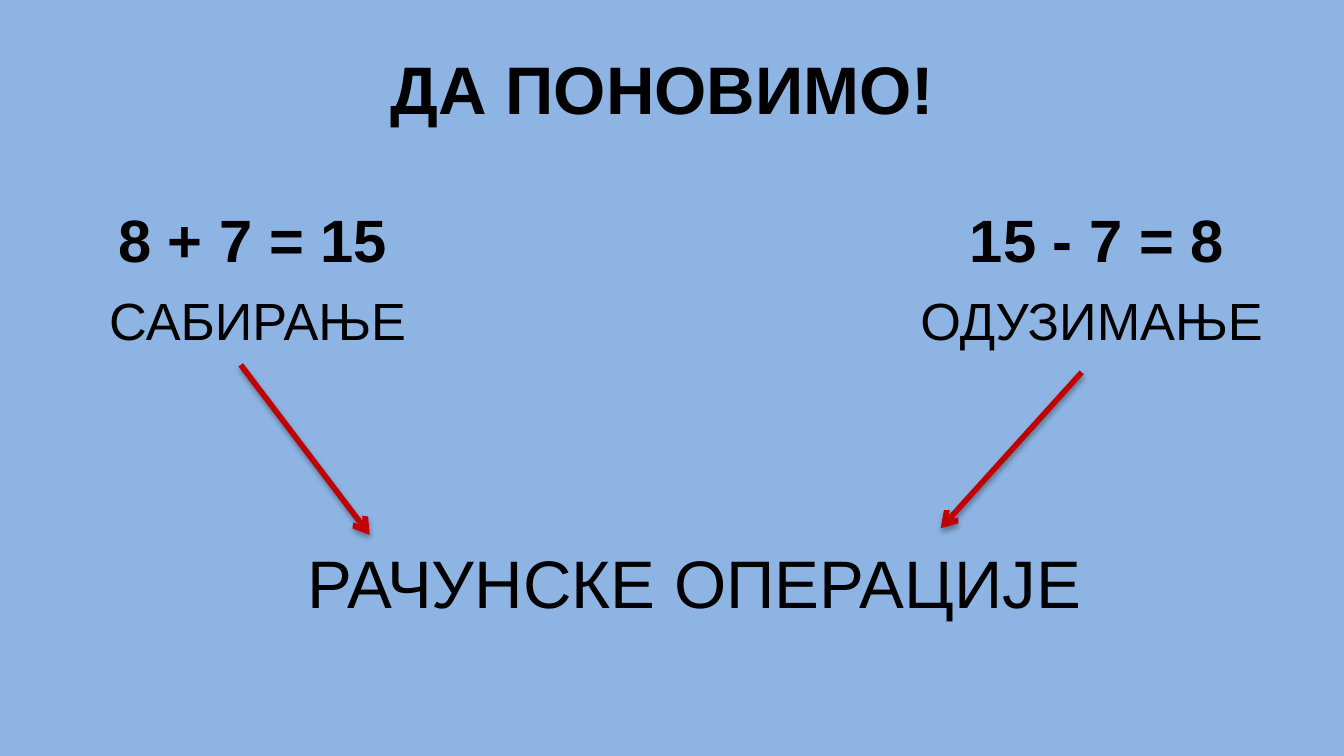
import pptx
import pptx.dml.color
import pptx.enum.shapes
import pptx.enum.text
import pptx.oxml
import pptx.oxml.ns
import pptx.util

COLORS = {"background": "8EB4E3", "text": "000000", "arrow": "C00000", "shadow": "000000"}
ALIGN = pptx.enum.text.PP_ALIGN
ANCHOR = pptx.enum.text.MSO_ANCHOR
AUTO_SIZE = pptx.enum.text.MSO_AUTO_SIZE


def color(name):
    return pptx.dml.color.RGBColor.from_string(COLORS[name])


def element(xml):
    return pptx.oxml.parse_xml(xml.replace(">", f" {pptx.oxml.ns.nsdecls('a')}>", 1))


def write_text(shape, text, size, bold=False, align=ALIGN.CENTER, anchor=ANCHOR.TOP,
               auto_size=AUTO_SIZE.NONE, plain_list=False):
    frame = shape.text_frame
    frame.word_wrap = True
    frame.auto_size = auto_size
    frame.vertical_anchor = anchor
    paragraph = frame.paragraphs[0]
    paragraph.alignment = align
    paragraph.space_before = pptx.util.Pt(0)
    if plain_list:
        properties = paragraph._p.get_or_add_pPr()
        properties.set("marL", "0")
        properties.set("indent", "0")
        properties.append(element("<a:buNone></a:buNone>"))
    run = paragraph.add_run()
    run.text = text
    run.font.name = "Arial"
    run.font.size = pptx.util.Pt(size)
    run.font.bold = bold
    run.font.color.rgb = color("text")


class SlideBuilder:
    """Holds the line style and the current slide, and adds its elements."""

    line_width = 3

    def __init__(self, slide):
        self.slide = slide
        slide.background.fill.solid()
        slide.background.fill.fore_color.rgb = color("background")

    def placeholder(self, index, box, text, **style):
        shape = self.slide.placeholders[index]
        shape.left, shape.top, shape.width, shape.height = map(pptx.util.Pt, box)
        write_text(shape, text, bold=True, **style)

    def label(self, box, text, **style):
        shape = self.slide.shapes.add_textbox(*map(pptx.util.Pt, box))
        write_text(shape, text, auto_size=AUTO_SIZE.SHAPE_TO_FIT_TEXT, **style)

    def arrow(self, start, end):
        connector = self.slide.shapes.add_connector(
            pptx.enum.shapes.MSO_CONNECTOR.STRAIGHT, *map(pptx.util.Pt, start + end))
        connector.line.color.rgb = color("arrow")
        connector.line.width = pptx.util.Pt(self.line_width)
        connector.line._get_or_add_ln().append(element('<a:tailEnd type="arrow"></a:tailEnd>'))
        blur, distance = pptx.util.Pt(3.1), pptx.util.Pt(1.8)
        connector._element.spPr.append(element(
            f'<a:effectLst><a:outerShdw blurRad="{blur}" dist="{distance}" dir="5400000" rotWithShape="0">'
            f'<a:srgbClr val="{COLORS["shadow"]}"><a:alpha val="35000"/></a:srgbClr>'
            "</a:outerShdw></a:effectLst>"))


def main():
    presentation = pptx.Presentation()
    presentation.slide_width = pptx.util.Pt(720)
    presentation.slide_height = pptx.util.Pt(405)
    builder = SlideBuilder(presentation.slides.add_slide(presentation.slide_layouts[3]))
    builder.placeholder(0, (198, 13, 324, 67.5), "ДА ПОНОВИМО! ", size=36,
                        anchor=ANCHOR.MIDDLE)
    builder.placeholder(1, (36, 105, 199, 36), "8 + 7 = 15", size=32, plain_list=True)
    builder.placeholder(2, (491.5, 105, 192.5, 36), "15 - 7 = 8", size=32, plain_list=True)
    builder.arrow((129, 195.5), (198, 286.5))
    builder.arrow((579.5, 199.5), (504, 283))
    builder.label((150, 286.5, 444, 51), "РАЧУНСКЕ ОПЕРАЦИЈЕ", size=36)
    builder.label((45, 151, 186, 41), "САБИРАЊЕ", size=28)
    builder.label((486, 151, 198, 41), "ОДУЗИМАЊЕ", size=28, align=ALIGN.LEFT)
    presentation.save("out.pptx")


if __name__ == "__main__":
    main()
